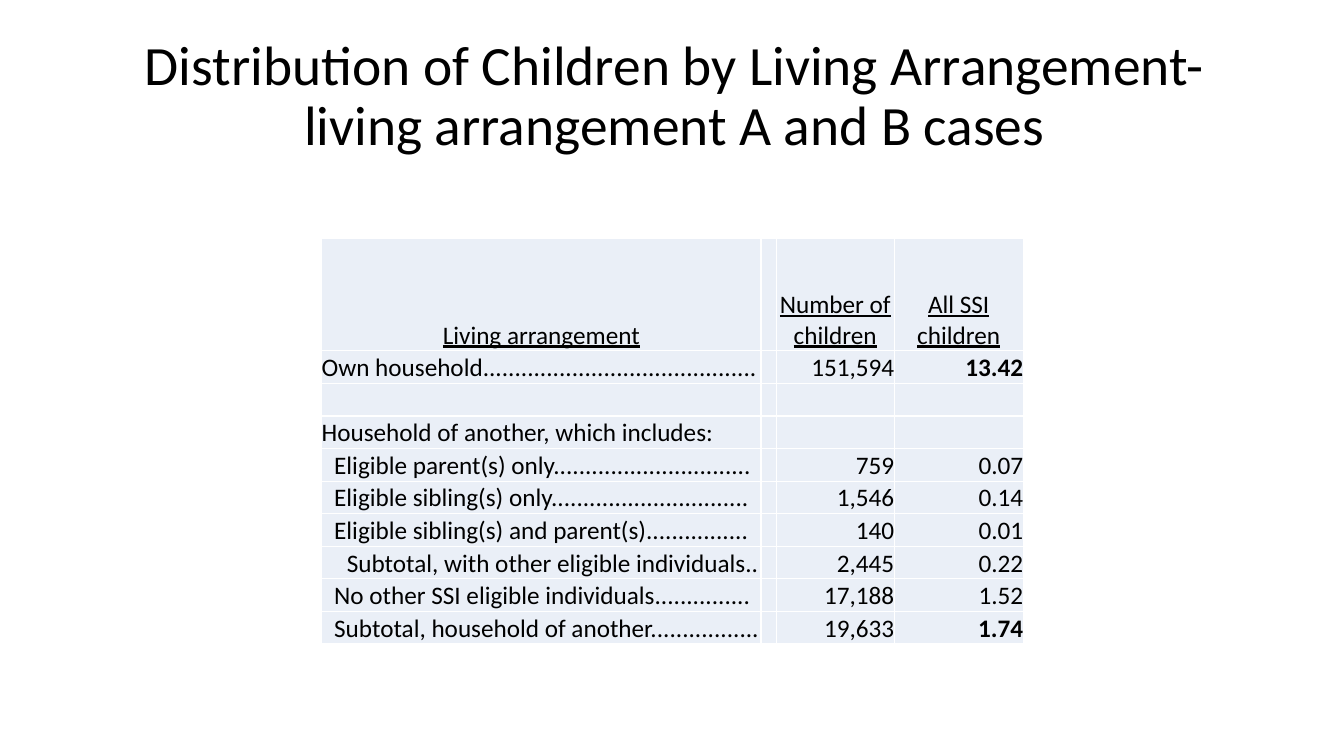
from dataclasses import dataclass

from lxml.etree import SubElement
from pptx import Presentation
from pptx.dml.color import RGBColor
from pptx.enum.text import MSO_ANCHOR, MSO_AUTO_SIZE, PP_ALIGN
from pptx.oxml.ns import qn
from pptx.slide import Slide
from pptx.table import _Cell
from pptx.text.text import _Paragraph
from pptx.util import Inches, Pt

BLACK = RGBColor(0x00, 0x00, 0x00)
WHITE = RGBColor(0xFF, 0xFF, 0xFF)
PALE = RGBColor(0xEA, 0xEF, 0xF7)
FONT = "Calibri"
WIDE, HIGH = Inches(13.33), Inches(7.5)
STEP = Inches(0.125)
COLS = (32.7, 1.13, 8.78, 9.6)
HEAD, BODY = 14.93, 4.31


@dataclass(frozen=True)
class Row:
    label: str = ""
    count: str = ""
    share: str = ""
    level: int = 0
    bold: bool = False


TITLES = ("Living arrangement", "", "Number of children", "All SSI children")
ROWS = (
    Row("Own household...........................................", "151,594", "13.42", bold=True),
    Row(),
    Row("Household of another, which includes:"),
    Row("Eligible parent(s) only...............................", "759", "0.07", 1),
    Row("Eligible sibling(s) only...............................", "1,546", "0.14", 1),
    Row("Eligible sibling(s) and parent(s)................", "140", "0.01", 1),
    Row("Subtotal, with other eligible individuals..", "2,445", "0.22", 2),
    Row("No other SSI eligible individuals...............", "17,188", "1.52", 1),
    Row("Subtotal, household of another.................", "19,633", "1.74", 1, True),
)


def across(share: float) -> int:
    return round(WIDE * share / 100)


def down(share: float) -> int:
    return round(HIGH * share / 100)


def style(para: _Paragraph, size: float, align: PP_ALIGN,
          bold: bool = False, line: bool = False) -> None:
    para.alignment = align
    for run in para.runs:
        font = run.font
        font.name, font.size = FONT, Pt(size)
        font.bold, font.underline = bold, line
        font.color.rgb = BLACK


def frame(cell: _Cell) -> None:
    props = cell._tc.get_or_add_tcPr()
    for side in ("lnL", "lnR", "lnT", "lnB"):
        edge = SubElement(props, qn(f"a:{side}"), w=str(Pt(1)))
        fill = SubElement(edge, qn("a:solidFill"))
        SubElement(fill, qn("a:srgbClr"), val=str(WHITE))


def put(cell: _Cell, text: str, align: PP_ALIGN, level: int = 0,
        bold: bool = False, line: bool = False) -> None:
    frame(cell)
    cell.fill.solid()
    cell.fill.fore_color.rgb = PALE
    cell.margin_left = STEP * level
    cell.margin_right = cell.margin_top = cell.margin_bottom = 0
    cell.vertical_anchor = MSO_ANCHOR.BOTTOM
    if text:
        cell.text_frame.text = text
        style(cell.text_frame.paragraphs[0], 18, align, bold, line)


def add_title(slide: Slide) -> None:
    title = slide.shapes.title
    title.left, title.top = across(7.05), down(5.87)
    title.width, title.height = across(86.27), down(14)
    body = title.text_frame
    body.text = "Distribution of Children by Living Arrangement-living arrangement A and B cases"
    body.word_wrap = True
    body.auto_size = MSO_AUTO_SIZE.NONE
    body.vertical_anchor = MSO_ANCHOR.MIDDLE
    para = body.paragraphs[0]
    para.line_spacing = 0.9
    style(para, 39.6, PP_ALIGN.CENTER)


def add_grid(slide: Slide) -> None:
    tall = HEAD + BODY * len(ROWS)
    grid = slide.shapes.add_table(
        len(ROWS) + 1, len(COLS), across(23.93), down(31.47),
        across(sum(COLS)), down(tall)).table
    grid.first_row = grid.horz_banding = False
    for col, width in zip(grid.columns, COLS):
        col.width = across(width)
    for num, line in enumerate(grid.rows):
        line.height = down(BODY if num else HEAD)
    for col, text in enumerate(TITLES):
        put(grid.cell(0, col), text, PP_ALIGN.CENTER, line=True)
    for num, row in enumerate(ROWS, 1):
        put(grid.cell(num, 0), row.label, PP_ALIGN.LEFT, row.level)
        put(grid.cell(num, 1), "", PP_ALIGN.LEFT)
        put(grid.cell(num, 2), row.count, PP_ALIGN.RIGHT)
        put(grid.cell(num, 3), row.share, PP_ALIGN.RIGHT, bold=row.bold)


def main() -> None:
    deck = Presentation()
    deck.slide_width, deck.slide_height = WIDE, HIGH
    slide = deck.slides.add_slide(deck.slide_layouts[5])
    add_title(slide)
    add_grid(slide)
    deck.save("out.pptx")


if __name__ == "__main__":
    main()
